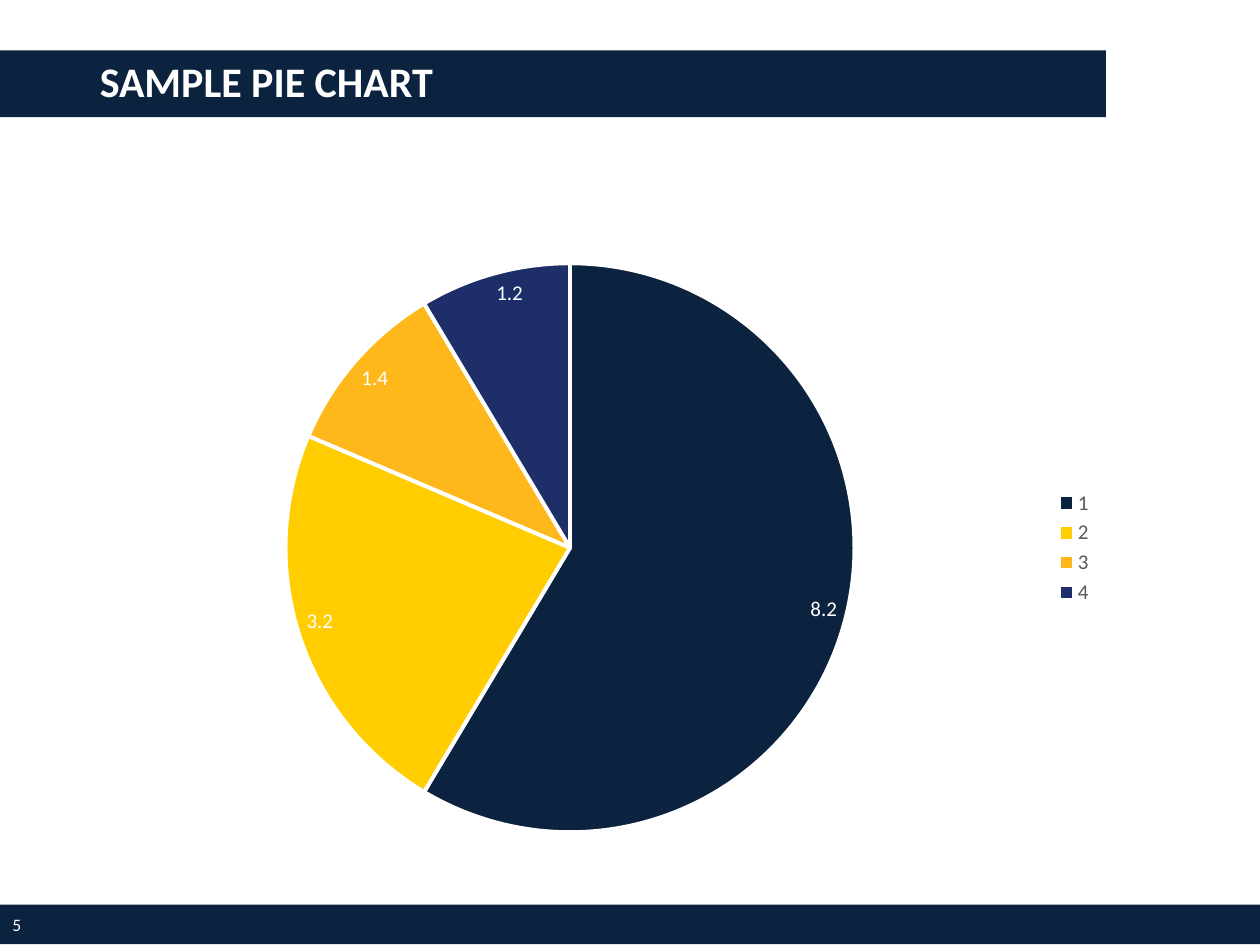
import pptx
import pptx.chart.data
import pptx.dml.color
import pptx.enum.chart
import pptx.enum.shapes
import pptx.enum.text
import pptx.util

Pt = pptx.util.Pt
COLORS = {
    "navy": "0C2340",
    "yellow": "FFCD00",
    "amber": "FFB81C",
    "indigo": "1D2E69",
    "white": "FFFFFF",
    "gray": "595959",
}
SLICES = [("1", 8.2, "navy"), ("2", 3.2, "yellow"), ("3", 1.4, "amber"), ("4", 1.2, "indigo")]
SLIDE_WIDTH, SLIDE_HEIGHT = 720, 540
FOOTER = {"left": 0, "top": 517, "height": 22.5}


def color(name):
    return pptx.dml.color.RGBColor.from_string(COLORS[name])


def apply_values(target, values):
    for name, value in values.items():
        setattr(target, name, value)


def place(shape, left, top, width, height):
    values = {"left": left, "top": top, "width": width, "height": height}
    apply_values(shape, {name: Pt(value) for name, value in values.items()})


def format_font(font, size, color_name, bold=False):
    apply_values(font, {"name": "Calibri", "size": Pt(size), "bold": bold})
    font.color.rgb = color(color_name)


def fill_solid(shape, color_name):
    shape.fill.solid()
    shape.fill.fore_color.rgb = color(color_name)


def write_text(shape, text, size, margins, bold=False, line_spacing=1.0):
    frame = shape.text_frame
    left, top, right, bottom = margins
    apply_values(frame, {
        "word_wrap": True,
        "auto_size": pptx.enum.text.MSO_AUTO_SIZE.NONE,
        "vertical_anchor": pptx.enum.text.MSO_ANCHOR.MIDDLE,
        "margin_left": Pt(left),
        "margin_top": Pt(top),
        "margin_right": Pt(right),
        "margin_bottom": Pt(bottom),
    })
    para = frame.paragraphs[0]
    apply_values(para, {"alignment": pptx.enum.text.PP_ALIGN.LEFT, "line_spacing": line_spacing})
    span = para.add_run()
    span.text = text
    format_font(span.font, size, "white", bold)


def add_title(page, text):
    title = page.shapes.title
    place(title, 0, 28.8, 632, 38.2)
    fill_solid(title, "navy")
    write_text(title, text, 24, (57, 3.6, 21.6, 3.6), bold=True, line_spacing=0.9)


def add_footer(page, number):
    bar = page.shapes.add_shape(pptx.enum.shapes.MSO_SHAPE.RECTANGLE, 0, 0, 0, 0)
    place(bar, width=SLIDE_WIDTH, **FOOTER)
    bar.shadow.inherit = False
    fill_solid(bar, "navy")
    bar.line.fill.background()
    box = page.shapes.add_textbox(0, 0, 0, 0)
    place(box, width=50, **FOOTER)
    write_text(box, number, 10, (7.2, 0, 7.2, 0))


def add_pie(page):
    data = pptx.chart.data.CategoryChartData()
    data.categories = [label for label, value, fill in SLICES]
    data.add_series("Series 1", [value for label, value, fill in SLICES])
    frame = page.shapes.add_chart(
        pptx.enum.chart.XL_CHART_TYPE.PIE, Pt(49.5), Pt(140.5), Pt(582.5), Pt(345), data)
    chart = frame.chart
    apply_values(chart, {"has_title": False, "has_legend": True})
    format_font(chart.font, 10, "gray")
    apply_values(chart.legend, {
        "position": pptx.enum.chart.XL_LEGEND_POSITION.RIGHT,
        "include_in_layout": False,
    })
    format_font(chart.legend.font, 12, "gray")
    plot = chart.plots[0]
    apply_values(plot, {"vary_by_categories": True, "has_data_labels": True})
    apply_values(plot.data_labels, {
        "show_value": True,
        "show_percentage": False,
        "number_format": "General",
        "number_format_is_linked": False,
        "position": pptx.enum.chart.XL_LABEL_POSITION.INSIDE_END,
    })
    format_font(plot.data_labels.font, 12, "white")
    for index, (label, value, fill) in enumerate(SLICES):
        wedge = plot.series[0].points[index].format
        fill_solid(wedge, fill)
        wedge.line.color.rgb = color("white")
        wedge.line.width = Pt(2.25)


def main():
    deck = pptx.Presentation()
    apply_values(deck, {"slide_width": Pt(SLIDE_WIDTH), "slide_height": Pt(SLIDE_HEIGHT)})
    page = deck.slides.add_slide(deck.slide_layouts.get_by_name("Title Only"))
    add_title(page, "SAMPLE PIE CHART")
    add_pie(page)
    add_footer(page, "5")
    deck.save("out.pptx")


if __name__ == "__main__":
    main()
